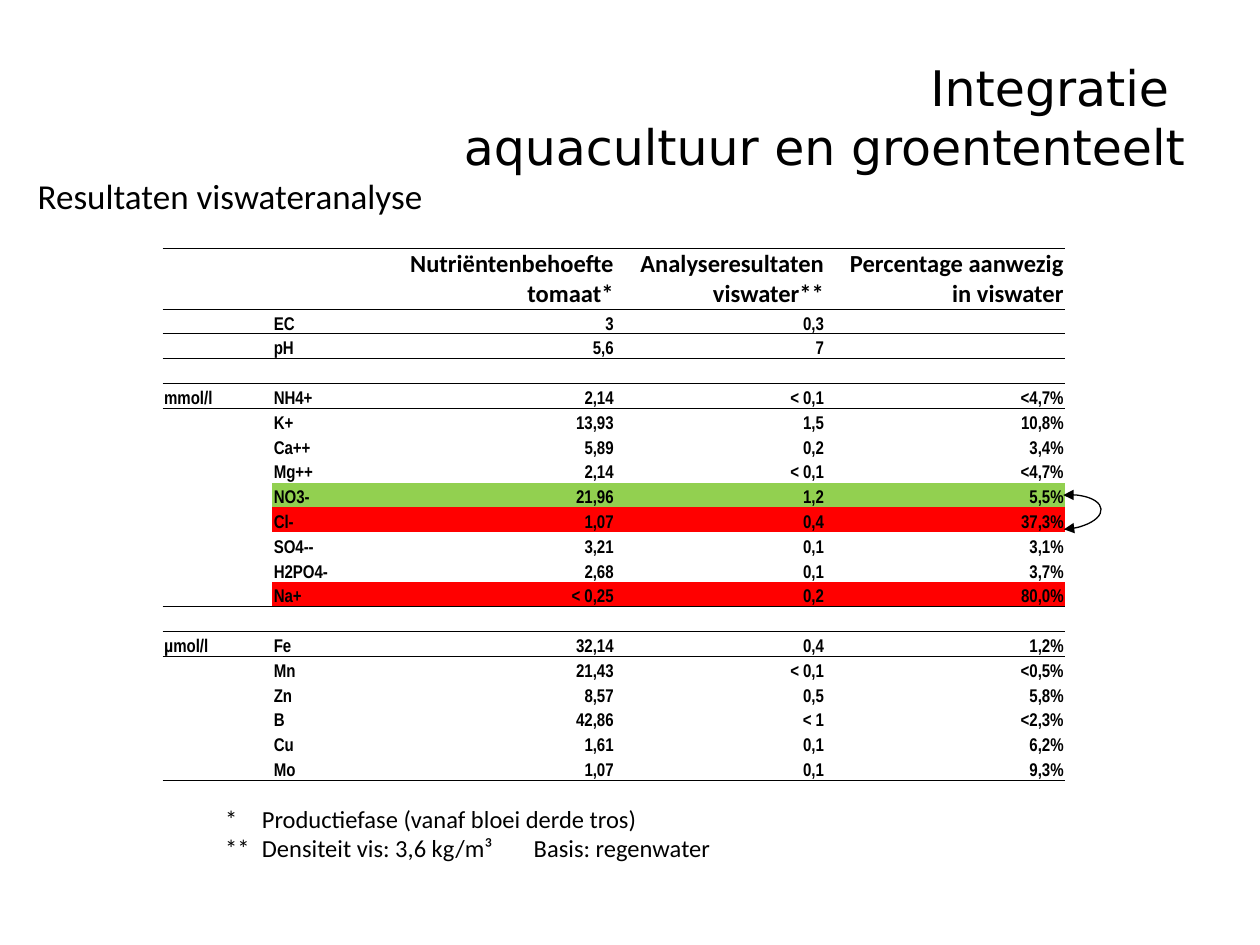
from dataclasses import dataclass

from lxml.etree import SubElement
from pptx import Presentation
from pptx.dml.color import RGBColor
from pptx.enum.shapes import MSO_SHAPE
from pptx.enum.text import MSO_ANCHOR, PP_ALIGN
from pptx.oxml.ns import qn
from pptx.util import Cm, Pt


@dataclass(frozen=True)
class Theme:
    ink: RGBColor = RGBColor(0, 0, 0)
    green: RGBColor = RGBColor(0x92, 0xD0, 0x50)
    red: RGBColor = RGBColor(0xFF, 0, 0)
    title_font: str = "DejaVu Sans"
    body_font: str = "Calibri"
    data_font: str = "Arial Narrow"
    title_size: float = 28
    subtitle_size: float = 20
    body_size: float = 14
    data_size: float = 10.5


theme = Theme()


def style_spans(para, name, size, bold=False):
    for span in para.runs:
        span.font.name = name
        span.font.size = Pt(size)
        span.font.bold = bold
        span.font.color.rgb = theme.ink


def add_text(left, top, width, height, lines, name, size):
    box = page.shapes.add_textbox(Cm(left), Cm(top), Cm(width), Cm(height))
    frame = box.text_frame
    frame.word_wrap = True
    frame.text = "\n".join(lines)
    for para in frame.paragraphs:
        style_spans(para, name, size)
    return frame


deck = Presentation()
deck.slide_width = Cm(25.4)
deck.slide_height = Cm(19.05)
page = deck.slides.add_slide(deck.slide_layouts[6])

title = add_text(1.27, 0.76, 22.86, 3.18, ["Integratie \vaquacultuur en groententeelt"],
                 theme.title_font, theme.title_size)
title.vertical_anchor = MSO_ANCHOR.MIDDLE
title.paragraphs[0].alignment = PP_ALIGN.RIGHT

rows = [
    ("", "", "Nutriëntenbehoefte tomaat*", "Analyseresultaten viswater**",
     "Percentage aanwezig in viswater"),
    ("", "EC", "3", "0,3", ""),
    ("", "pH", "5,6", "7", ""),
    ("", "", "", "", ""),
    ("mmol/l", "NH4+", "2,14", "< 0,1", "<4,7%"),
    ("", "K+", "13,93", "1,5", "10,8%"),
    ("", "Ca++", "5,89", "0,2", "3,4%"),
    ("", "Mg++", "2,14", "< 0,1", "<4,7%"),
    ("", "NO3-", "21,96", "1,2", "5,5%"),
    ("", "Cl-", "1,07", "0,4", "37,3%"),
    ("", "SO4--", "3,21", "0,1", "3,1%"),
    ("", "H2PO4-", "2,68", "0,1", "3,7%"),
    ("", "Na+", "< 0,25", "0,2", "80,0%"),
    ("", "", "", "", ""),
    ("µmol/l", "Fe", "32,14", "0,4", "1,2%"),
    ("", "Mn", "21,43", "< 0,1", "<0,5%"),
    ("", "Zn", "8,57", "0,5", "5,8%"),
    ("", "B", "42,86", "< 1", "<2,3%"),
    ("", "Cu", "1,61", "0,1", "6,2%"),
    ("", "Mo", "1,07", "0,1", "9,3%"),
]
column_widths = [2.21, 2.21, 4.7, 4.24, 4.83]
header_height, row_height = 1.23, 0.5
highlights = {"NO3-": theme.green, "Cl-": theme.red, "Na+": theme.red}
ruled_below = {-1, 0, 2, 3, 12, 13, 19}

table_shape = page.shapes.add_table(
    len(rows), len(column_widths), Cm(3.28), Cm(5), Cm(sum(column_widths)),
    Cm(header_height + row_height * (len(rows) - 1)))
table = table_shape.table
table.first_row = False
table.horz_banding = False
style_id = table_shape.element.find(".//" + qn("a:tableStyleId"))
style_id.text = "{2D5ABB26-0587-4C30-8999-92F81FD0307C}"
for column, width in zip(table.columns, column_widths):
    column.width = Cm(width)

for row_index, values in enumerate(rows):
    is_header = row_index == 0
    table.rows[row_index].height = Cm(header_height if is_header else row_height)
    name = theme.body_font if is_header else theme.data_font
    size = theme.body_size if is_header else theme.data_size
    for column_index, value in enumerate(values):
        cell = table.cell(row_index, column_index)
        cell.margin_left = cell.margin_right = cell.margin_top = Cm(0.03)
        cell.margin_bottom = 0
        cell.vertical_anchor = MSO_ANCHOR.BOTTOM
        para = cell.text_frame.paragraphs[0]
        para.alignment = PP_ALIGN.RIGHT if column_index > 1 else PP_ALIGN.LEFT
        if value:
            para.text = value
            style_spans(para, name, size, bold=True)
        else:
            SubElement(para._p, qn("a:endParaRPr"), sz=str(int(theme.data_size * 100)))
        properties = cell._tc.get_or_add_tcPr()
        for edge, neighbour in (("a:lnT", row_index - 1), ("a:lnB", row_index)):
            if neighbour in ruled_below:
                rule = SubElement(properties, qn(edge), w=str(Pt(0.5)))
                fill = SubElement(rule, qn("a:solidFill"))
                SubElement(fill, qn("a:srgbClr"), val=str(theme.ink))
        if column_index > 0 and values[1] in highlights:
            cell.fill.solid()
            cell.fill.fore_color.rgb = highlights[values[1]]
        else:
            cell.fill.background()

swap_arc = page.shapes.add_shape(MSO_SHAPE.ARC, Cm(20.73), Cm(9.98), Cm(1.47), Cm(0.69))
swap_arc.adjustments[0] = 162
swap_arc.adjustments[1] = 58.64
swap_arc.rotation = 355.1
swap_arc.shadow.inherit = False
swap_arc.fill.background()
swap_arc.line.color.rgb = theme.ink
swap_arc.line.width = Pt(0.75)
for arrowhead in ("a:headEnd", "a:tailEnd"):
    SubElement(swap_arc.line._get_or_add_ln(), qn(arrowhead), type="triangle")

footnotes = add_text(4.29, 16.08, 10.59, 1.45,
                     ["*\tProductiefase (vanaf bloei derde tros)",
                      "**\tDensiteit vis: 3,6 kg/m³\tBasis: regenwater"],
                     theme.body_font, theme.body_size)
for para, stops in zip(footnotes.paragraphs, ([0.74], [0.74, 6.22])):
    tabs = SubElement(para._p.get_or_add_pPr(), qn("a:tabLst"))
    for stop in stops:
        SubElement(tabs, qn("a:tab"), pos=str(Cm(stop)), algn="l")

add_text(0.51, 3.4, 22.81, 1.12, ["Resultaten viswateranalyse"],
         theme.body_font, theme.subtitle_size)

deck.save("out.pptx")
